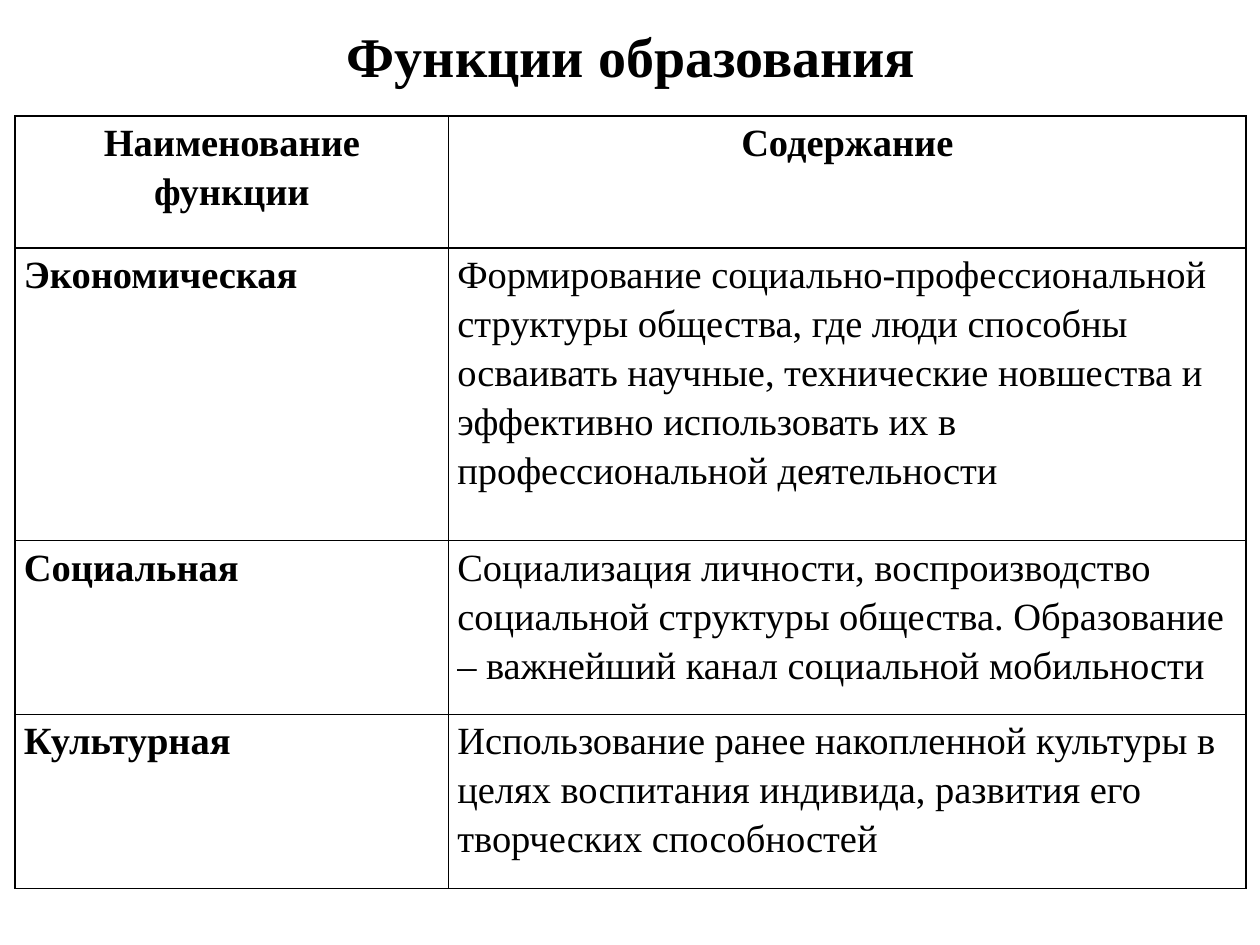
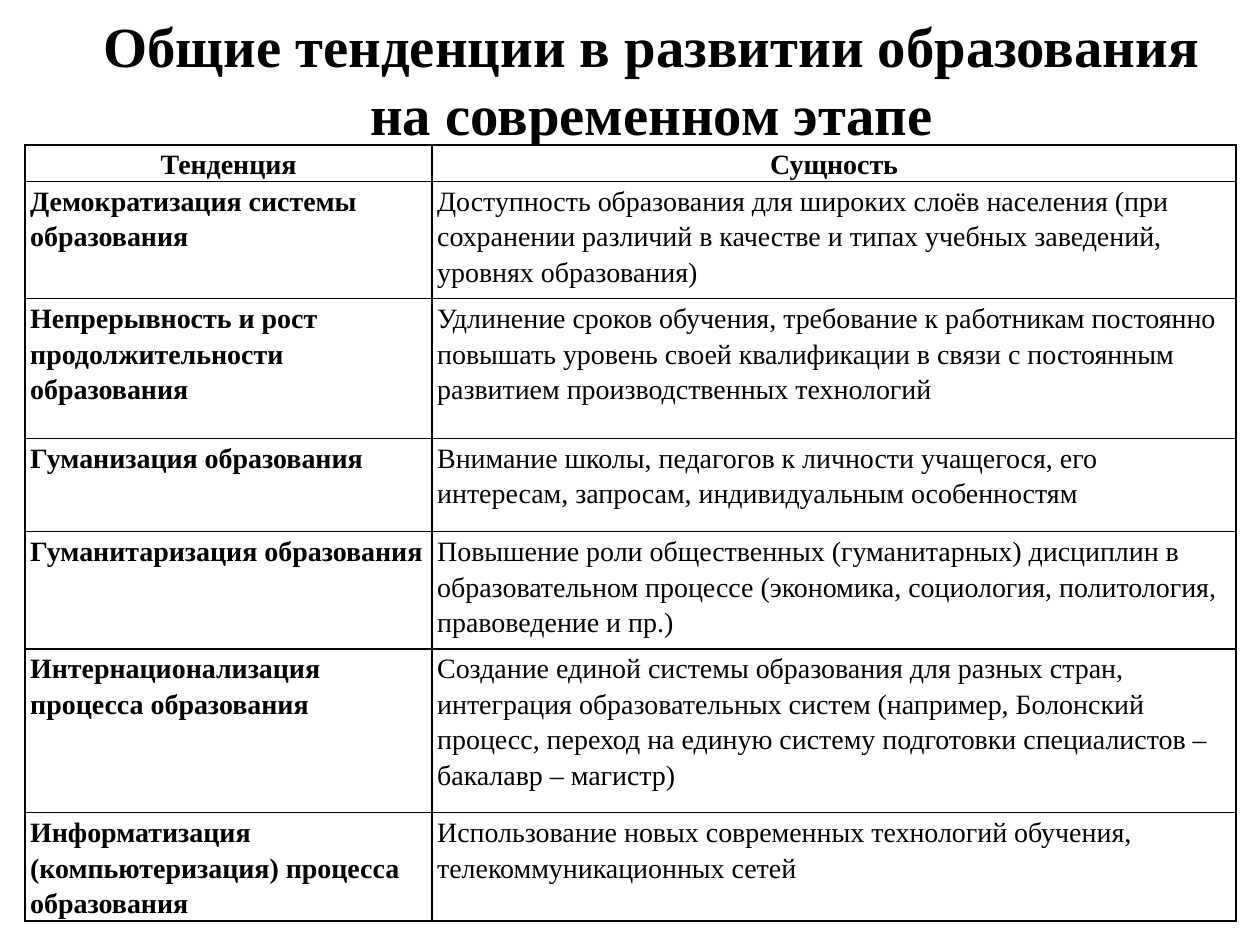
from lxml import etree
from pptx import Presentation
from pptx.dml.color import RGBColor
from pptx.enum.text import MSO_ANCHOR, MSO_AUTO_SIZE, PP_ALIGN
from pptx.oxml.ns import qn
from pptx.util import Inches, Pt

LEFT, CENTER = PP_ALIGN.LEFT, PP_ALIGN.CENTER
MIDDLE = MSO_ANCHOR.MIDDLE
NO_AUTOFIT = MSO_AUTO_SIZE.NONE

COLORS = {"text": "000000", "border": "000000", "cell": "FFFFFF"}
FONT = "Times New Roman"
TITLE_ONLY = 5
BORDER_SIDES = ("lnL", "lnR", "lnT", "lnB")

FUNCTIONS = [
    ("Наименование функции", "Содержание"),
    ("Экономическая",
     "Формирование социально-профессиональной структуры общества, где люди способны "
     "осваивать научные, технические новшества и эффективно использовать их в "
     "профессиональной деятельности"),
    ("Социальная",
     "Социализация личности, воспроизводство социальной структуры общества. "
     "Образование – важнейший канал социальной мобильности"),
    ("Культурная",
     "Использование ранее накопленной культуры в целях воспитания индивида, "
     "развития его творческих способностей"),
]

TRENDS = [
    ("Тенденция", "Сущность"),
    ("Демократизация системы образования",
     "Доступность образования для широких слоёв населения (при сохранении различий "
     "в качестве и типах учебных заведений, уровнях образования)"),
    ("Непрерывность и рост продолжительности образования",
     "Удлинение сроков обучения, требование к работникам постоянно повышать уровень "
     "своей квалификации в связи с постоянным развитием производственных технологий"),
    ("Гуманизация образования",
     "Внимание школы, педагогов к личности учащегося, его интересам, запросам, "
     "индивидуальным особенностям"),
    ("Гуманитаризация образования",
     "Повышение роли общественных (гуманитарных) дисциплин в образовательном процессе "
     "(экономика, социология, политология, правоведение и пр.)"),
    ("Интернационализация процесса образования",
     "Создание единой системы образования для разных стран, интеграция образовательных "
     "систем (например, Болонский процесс, переход на единую систему подготовки "
     "специалистов – бакалавр – магистр)"),
    ("Информатизация (компьютеризация) процесса образования",
     "Использование новых современных технологий обучения, телекоммуникационных сетей"),
]


def write_text(text_frame, text, size, bold=False, align=LEFT, line_spacing=None):
    """Write one formatted paragraph into a text frame."""
    paragraph = text_frame.paragraphs[0]
    paragraph.alignment = align
    paragraph.line_spacing = line_spacing
    run = paragraph.add_run()
    run.text = text
    run.font.name = FONT
    run.font.size = Pt(size)
    run.font.bold = bold
    run.font.color.rgb = RGBColor.from_string(COLORS["text"])


def add_titled_slide(presentation, text, left, top, size, bottom_inset=0.05):
    """Add a slide whose title placeholder is moved and formatted."""
    slide = presentation.slides.add_slide(presentation.slide_layouts[TITLE_ONLY])
    title = slide.shapes.title
    title.left, title.top = Inches(left), Inches(top)
    title.width, title.height = Inches(9), Inches(1.25)
    text_frame = title.text_frame
    text_frame.auto_size = NO_AUTOFIT
    text_frame.word_wrap = True
    text_frame.vertical_anchor = MIDDLE
    text_frame.margin_bottom = Inches(bottom_inset)
    write_text(text_frame, text, size, bold=True, align=CENTER)
    return slide


def add_borders(cell):
    """Draw a one-point line on every side of a table cell."""
    properties = cell._tc.get_or_add_tcPr()
    for index, side in enumerate(BORDER_SIDES):
        line = etree.Element(qn(f"a:{side}"), w=str(Pt(1)))
        fill = etree.SubElement(line, qn("a:solidFill"))
        etree.SubElement(fill, qn("a:srgbClr"), val=COLORS["border"])
        properties.insert(index, line)


def format_cell(cell, text, size, inset, bold, align):
    """Fill, outline and write one table cell."""
    cell.fill.solid()
    cell.fill.fore_color.rgb = RGBColor.from_string(COLORS["cell"])
    cell.margin_left = cell.margin_right = Inches(inset)
    cell.margin_top = cell.margin_bottom = 0
    add_borders(cell)
    write_text(cell.text_frame, text, size, bold=bold, align=align, line_spacing=1.15)


def add_grid(slide, entries, left, top, column_widths, row_heights, size, inset):
    """Add a table with a bold centred header and a bold first column."""
    table = slide.shapes.add_table(
        len(entries), len(column_widths), Inches(left), Inches(top),
        Inches(sum(column_widths)), Inches(sum(row_heights))).table
    table.first_row = table.horz_banding = False
    for column, width in zip(table.columns, column_widths):
        column.width = Inches(width)
    for row_index, (row, height, entry) in enumerate(zip(table.rows, row_heights, entries)):
        row.height = Inches(height)
        is_header = row_index == 0
        for column_index, text in enumerate(entry):
            format_cell(table.cell(row_index, column_index), text, size, inset,
                        bold=is_header or column_index == 0,
                        align=CENTER if is_header else LEFT)


def main():
    """Build both slides and save the presentation."""
    presentation = Presentation()
    presentation.slide_width, presentation.slide_height = Inches(10), Inches(7.5)

    slide = add_titled_slide(presentation, "Функции образования", 0.51, -0.19, 32)
    add_grid(slide, FUNCTIONS, 0.12, 0.92, (3.44, 6.33), (1.05, 2.32, 1.38, 1.38),
             size=22, inset=0.07)

    slide = add_titled_slide(
        presentation, "Общие тенденции в развитии образования на современном этапе",
        0.67, 0.29, 32.4, bottom_inset=0.63)
    add_grid(slide, TRENDS, 0.2, 1.15, (3.23, 6.38),
             (0.29, 0.93, 1.11, 0.74, 0.93, 1.3, 0.86), size=16, inset=0.04)

    presentation.save("out.pptx")


if __name__ == "__main__":
    main()
